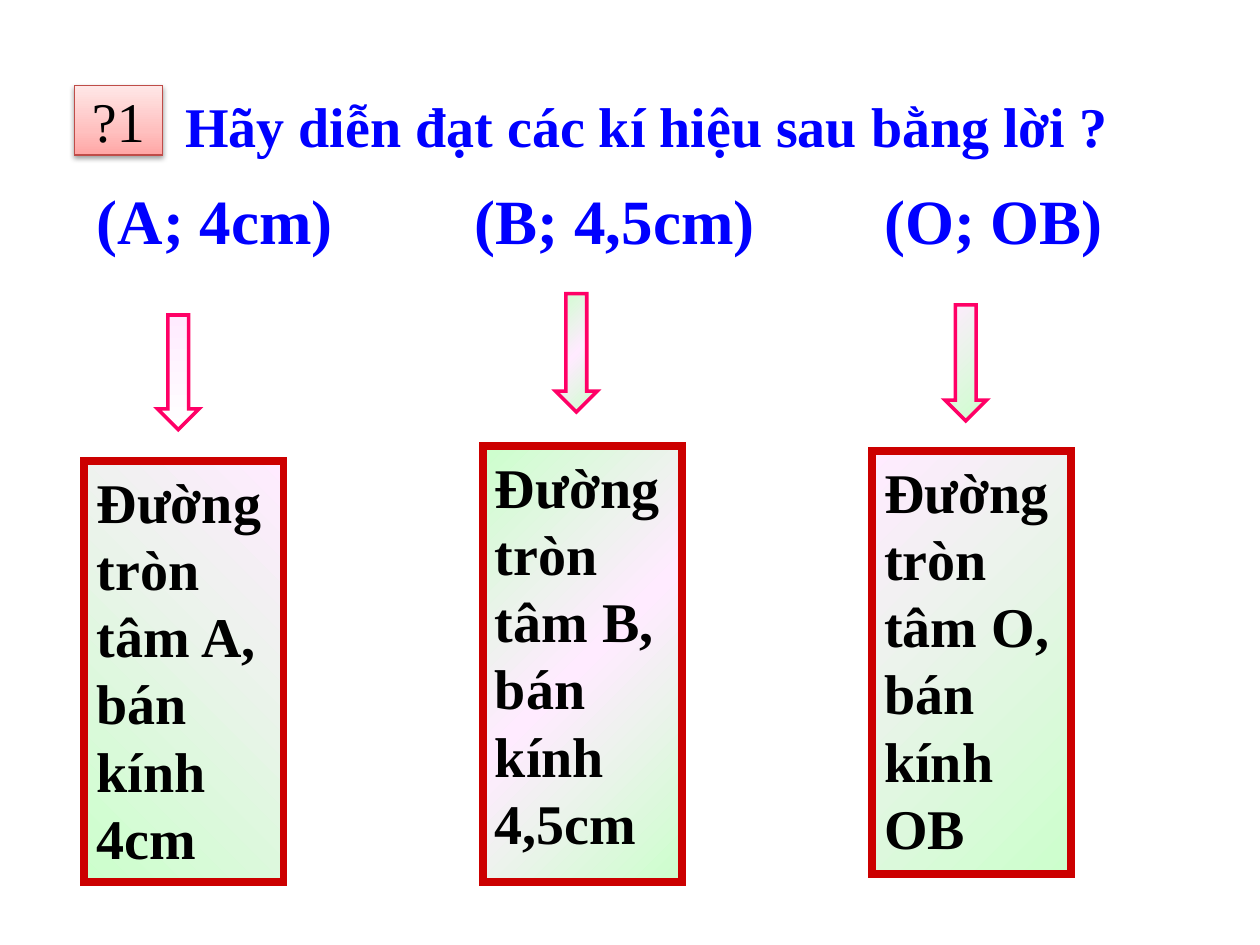
from dataclasses import dataclass

from lxml import etree
from pptx import Presentation
from pptx import util as u
from pptx.dml import color
from pptx.enum import shapes, text
from pptx.oxml import ns


@dataclass(frozen=True)
class Theme:
    font: str = "Times New Roman"
    blue: str = "0000FF"
    black: str = "000000"
    green: str = "CCFFCC"
    pink: str = "FFEBFF"
    white: str = "FFFFFF"
    box_line: str = "CC0000"
    arrow_line: str = "FF0066"
    badge_line: str = "BF4C48"
    badge_fill: tuple = ((0, "FFA6A5"), (35, "FFC0BF"), (100, "FFE7E7"))
    body_size: int = 32
    symbol_size: int = 36


THEME = Theme()
PINK_TO_GREEN = ((0, THEME.pink), (100, THEME.green))
GREEN_TO_PINK = ((0, THEME.green), (100, THEME.pink))
PINK_TO_WHITE = ((0, THEME.pink), (100, THEME.white))
GREEN_PINK_GREEN = ((0, THEME.green), (50, THEME.pink), (100, THEME.green))


def inches(*lengths):
    return [u.Inches(length) for length in lengths]


def add_child(parent, tag, **attributes):
    return etree.SubElement(parent, ns.qn(tag), {k: str(v) for k, v in attributes.items()})


def write_text(shape, content, size, rgb, bold=True, align=text.PP_ALIGN.LEFT,
               anchor=text.MSO_ANCHOR.TOP, wrap=True):
    frame = shape.text_frame
    frame.auto_size = text.MSO_AUTO_SIZE.NONE
    frame.word_wrap = wrap
    frame.vertical_anchor = anchor
    paragraph = frame.paragraphs[0]
    paragraph.alignment = align
    run = paragraph.add_run()
    run.text = content
    run.font.name = THEME.font
    run.font.size = u.Pt(size)
    run.font.bold = bold
    run.font.color.rgb = color.RGBColor.from_string(rgb)
    return paragraph


def fill_gradient(shape, stops, angle):
    shape.fill.gradient()
    shape.fill.gradient_angle = angle
    stop_list = shape._element.spPr.find(ns.qn("a:gradFill")).find(ns.qn("a:gsLst"))
    for old_stop in list(stop_list):
        stop_list.remove(old_stop)
    for position, rgb in stops:
        stop = add_child(stop_list, "a:gs", pos=position * 1000)
        add_child(stop, "a:srgbClr", val=rgb)


def add_gradient_shape(container, kind, place, stops, angle, line_rgb, line_width):
    shape = container.add_shape(kind, *inches(*place))
    shape.shadow.inherit = False
    fill_gradient(shape, stops, angle)
    shape.line.color.rgb = color.RGBColor.from_string(line_rgb)
    shape.line.width = u.Pt(line_width)
    add_child(shape.line._ln, "a:miter", lim=800000)
    return shape


def add_shadow(shape):
    effects = shape._element.spPr.find(ns.qn("a:effectLst"))
    shadow = add_child(effects, "a:outerShdw", blurRad=u.Pt(3.1), dist=u.Pt(1.6),
                       dir=90 * 60000, rotWithShape=0)
    rgb = add_child(shadow, "a:srgbClr", val=THEME.black)
    add_child(rgb, "a:alpha", val=38000)


def add_symbols(slide, symbols, tab_stops):
    box = slide.shapes.add_textbox(*inches(0.67, 1.39, 9.08, 0.71))
    paragraph = write_text(box, "\t".join(symbols), THEME.symbol_size, THEME.blue)
    tab_list = add_child(paragraph._p.get_or_add_pPr(), "a:tabLst")
    for stop in tab_stops:
        add_child(tab_list, "a:tab", pos=u.Inches(stop), algn="l")


def add_answer(slide, content, left, box_top, box_height, box_fill,
               arrow_top, arrow_height, arrow_fill):
    group = slide.shapes.add_group_shape()
    box = add_gradient_shape(group.shapes, shapes.MSO_SHAPE.RECTANGLE,
                             (left, box_top, 1.58, box_height),
                             *box_fill, THEME.box_line, 4.5)
    write_text(box, content, THEME.body_size, THEME.black)
    add_gradient_shape(group.shapes, shapes.MSO_SHAPE.DOWN_ARROW,
                       (left + 0.58, arrow_top, 0.33, arrow_height),
                       *arrow_fill, THEME.arrow_line, 2)


def add_title(slide, content):
    title = slide.shapes.title
    title.left, title.top, title.width, title.height = inches(1.37, 0.68, 7.59, 0.64)
    write_text(title, content, THEME.body_size, THEME.blue, wrap=False)


def add_badge(slide, content):
    badge = add_gradient_shape(slide.shapes, shapes.MSO_SHAPE.RECTANGLE,
                               (0.59, 0.68, 0.7, 0.55),
                               THEME.badge_fill, 90, THEME.badge_line, 0.75)
    add_shadow(badge)
    write_text(badge, content, THEME.body_size, THEME.black, bold=False,
               align=text.PP_ALIGN.CENTER, anchor=text.MSO_ANCHOR.MIDDLE)


def main():
    presentation = Presentation()
    presentation.slide_width, presentation.slide_height = inches(10, 7.5)
    slide = presentation.slides.add_slide(presentation.slide_layouts[5])

    add_title(slide, "Hãy diễn đạt các kí hiệu sau bằng lời ?")
    add_symbols(slide, ("(A; 4cm)", "(B; 4,5cm)", "(O; OB)"), (3, 6.25))
    add_answer(slide, "Đường tròn tâm A, bán kính 4cm", 0.67, 3.66, 3.34,
               (GREEN_TO_PINK, 45), 2.5, 0.91, (PINK_TO_WHITE, 270))
    add_answer(slide, "Đường tròn tâm B, bán kính 4,5cm", 3.83, 3.54, 3.46,
               (GREEN_PINK_GREEN, 315), 2.33, 0.94, (GREEN_PINK_GREEN, 315))
    add_answer(slide, "Đường tròn tâm O, bán kính OB", 6.92, 3.58, 3.36,
               (PINK_TO_GREEN, 315), 2.42, 0.92, (PINK_TO_GREEN, 315))
    add_badge(slide, "?1")

    presentation.save("out.pptx")


if __name__ == "__main__":
    main()
